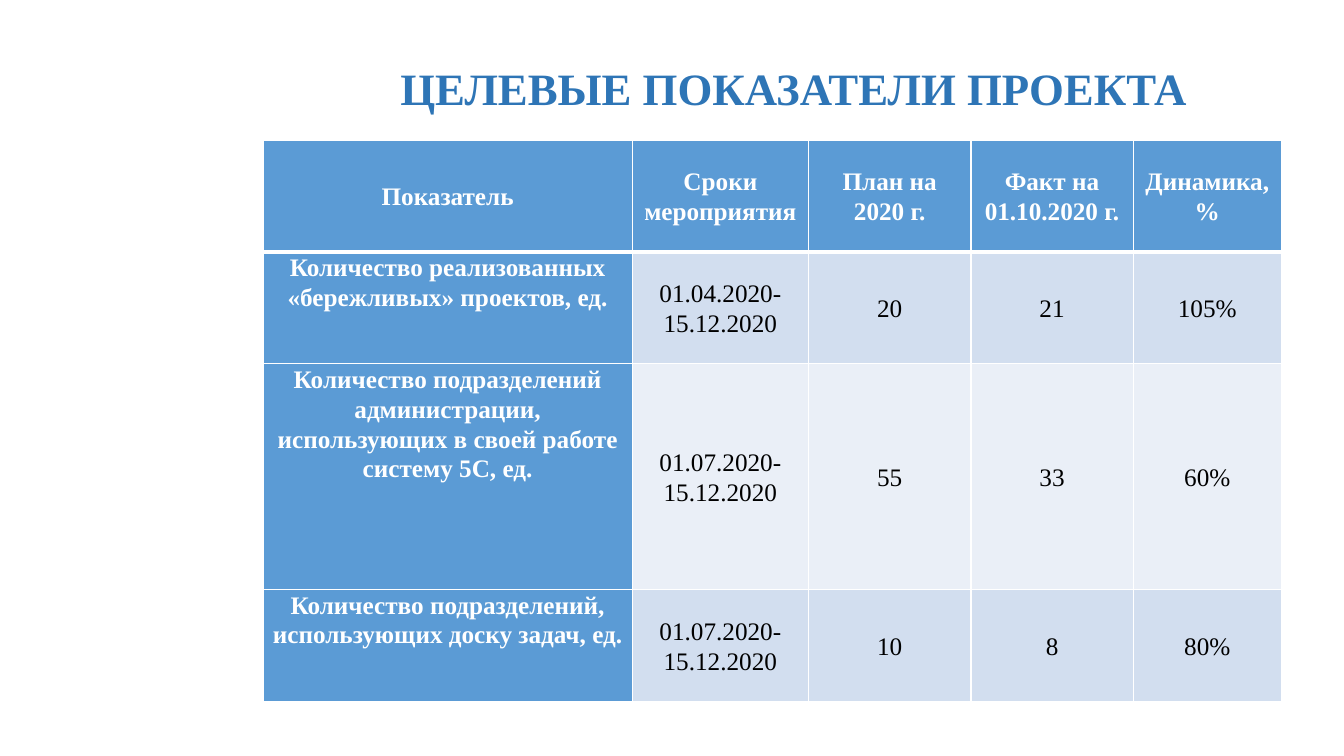
from pptx import Presentation
from pptx.dml.color import RGBColor
from pptx.enum import text
from pptx.oxml import parse_xml
from pptx.oxml.ns import nsdecls
from pptx.util import Inches, Pt

FONT = "Times New Roman"
TITLE_BLUE, HEAD_BLUE = "2E75B6", "5B9BD5"
BANDS = ["D2DEEF", "EAEFF7"]
WHITE, BLACK = "FFFFFF", "000000"
COLS = [3.66, 1.75, 1.61, 1.61, 1.47]
ROWS = [1.11, 1.11, 2.24, 1.11]
INDICATORS = [
    ["Показатель", "Сроки мероприятия", "План на\n2020 г.",
     "Факт на\n01.10.2020 г.", "Динамика, %"],
    ["Количество реализованных «бережливых» проектов, ед.",
     "01.04.2020-\n15.12.2020", "20", "21", "105%"],
    ["Количество подразделений администрации, использующих в своей работе систему 5C, ед.",
     "01.07.2020-\n15.12.2020", "55", "33", "60%"],
    ["Количество подразделений, использующих доску задач, ед.",
     "01.07.2020-15.12.2020", "10", "8", "80%"],
]


def rgb(value):
    """Turn a hex string into a colour."""
    return RGBColor.from_string(value)


def add_run(p, words, size, color, bold):
    """Append one formatted run to a paragraph."""
    r = p.add_run()
    r.text = words
    r.font.name, r.font.size, r.font.bold = FONT, Pt(size), bold
    r.font.color.rgb = rgb(color)


def add_title(s, words):
    """Place and format the slide title."""
    sp = s.shapes.title
    sp.left, sp.top = Inches(3.38), Inches(0.55)
    sp.width, sp.height = Inches(9.47), Inches(0.64)
    tf = sp.text_frame
    tf.word_wrap = True
    tf.auto_size = text.MSO_AUTO_SIZE.SHAPE_TO_FIT_TEXT
    tf.vertical_anchor = text.MSO_ANCHOR.MIDDLE
    p = tf.paragraphs[0]
    p.alignment = text.PP_ALIGN.LEFT
    pPr = p._p.get_or_add_pPr()
    pPr.set("marL", "0")
    pPr.set("indent", str(Inches(0.49)))
    add_run(p, words, 32, TITLE_BLUE, True)


def set_borders(cell, top, bottom):
    """Draw white cell borders with the given top and bottom widths."""
    tcPr = cell._tc.get_or_add_tcPr()
    for side, width in zip("LRTB", (1, 1, top, bottom)):
        tcPr.append(parse_xml(
            f'<a:ln{side} {nsdecls("a")} w="{Pt(width)}"><a:solidFill>'
            f'<a:srgbClr val="{WHITE}"/></a:solidFill></a:ln{side}>'))


def fill_cell(cell, words, row, col):
    """Format one cell by its row and column and write its text."""
    heading = row == 0 or col == 0
    set_borders(cell, 3 if row == 1 else 1, 3 if row == 0 else 1)
    cell.fill.solid()
    cell.fill.fore_color.rgb = rgb(HEAD_BLUE if heading else BANDS[(row - 1) % 2])
    cell.margin_left = cell.margin_right = Inches(0.07)
    cell.margin_top = cell.margin_bottom = 0
    top_aligned = row > 0 and col == 0
    cell.vertical_anchor = text.MSO_ANCHOR.TOP if top_aligned else text.MSO_ANCHOR.MIDDLE
    tf = cell.text_frame
    for i, line in enumerate(words.split("\n")):
        p = tf.add_paragraph() if i else tf.paragraphs[0]
        p.alignment = text.PP_ALIGN.CENTER
        p.line_spacing = 1.07
        add_run(p, line, 18, WHITE if heading else BLACK, heading)


def add_indicator_table(s):
    """Add the table of target indicators."""
    table = s.shapes.add_table(len(ROWS), len(COLS), Inches(2.61), Inches(1.39),
                               Inches(sum(COLS)), Inches(sum(ROWS))).table
    for column, width in zip(table.columns, COLS):
        column.width = Inches(width)
    for row, height in zip(table.rows, ROWS):
        row.height = Inches(height)
    for i, values in enumerate(INDICATORS):
        for j, words in enumerate(values):
            fill_cell(table.cell(i, j), words, i, j)


def main():
    """Build and save the slide."""
    prs = Presentation()
    prs.slide_width, prs.slide_height = Inches(13.33), Inches(7.5)
    s = prs.slides.add_slide(prs.slide_layouts[5])
    add_title(s, "ЦЕЛЕВЫЕ ПОКАЗАТЕЛИ ПРОЕКТА")
    add_indicator_table(s)
    prs.save("out.pptx")


if __name__ == "__main__":
    main()
